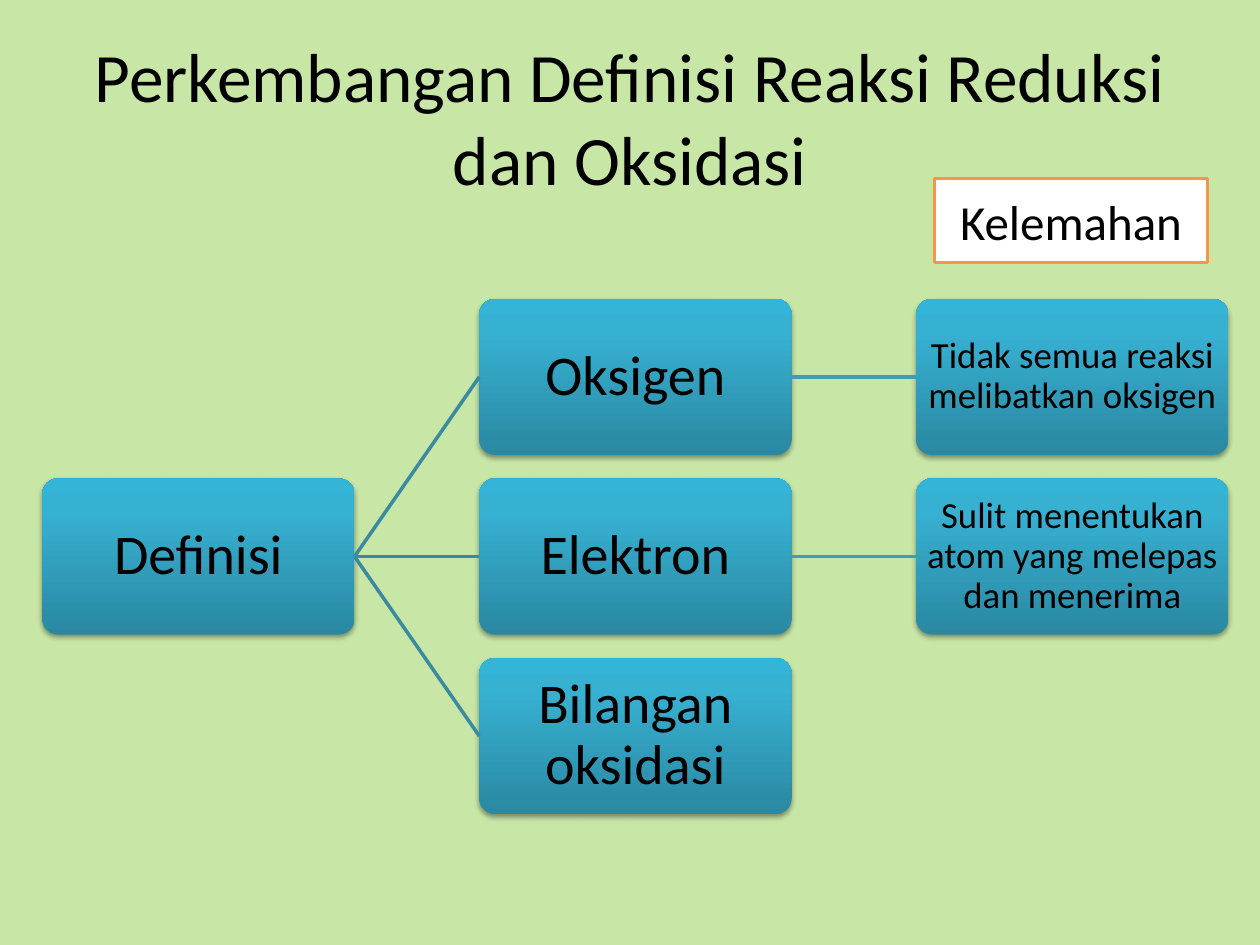
"""Build the slide on how the definition of redox reactions developed."""
import copy

import lxml.etree
import pptx
import pptx.dml.color
import pptx.enum.shapes
import pptx.enum.text
import pptx.oxml
import pptx.oxml.ns
import pptx.util

Pt = pptx.util.Pt
SHAPES = pptx.enum.shapes.MSO_SHAPE

COLOURS = {
    "background": "C8E7A7",
    "text": "000000",
    "box_bottom": "2A88A2",
    "box_middle": "37B1D2",
    "box_top": "34B4D6",
    "branch": "3C8A9F",
    "weakness_link": "449CB4",
    "label_fill": "FFFFFF",
    "label_line": "F79646",
}
BOX_WIDTH, BOX_HEIGHT = 178.4, 89.2
LEFT, TOP = 24.2, 170.8
COLUMN_PITCH, ROW_PITCH = 249.7, 102.6
LEFT_SITE, RIGHT_SITE = 1, 3
SHADOW = (
    '<a:outerShdw %s blurRad="39370" dist="20320" dir="5400000" rotWithShape="0">'
    '<a:srgbClr val="000000"><a:alpha val="38000"/></a:srgbClr></a:outerShdw>'
    % pptx.oxml.ns.nsdecls("a")
)


def colour(name):
    return pptx.dml.color.RGBColor.from_string(COLOURS[name])


def apply_format(target, values):
    for attribute, value in values.items():
        setattr(target, attribute, value)


def write_text(frame, wording, size, inset=None, line_spacing=None):
    frame.text = wording
    apply_format(frame, {
        "word_wrap": True,
        "auto_size": pptx.enum.text.MSO_AUTO_SIZE.NONE,
        "vertical_anchor": pptx.enum.text.MSO_ANCHOR.MIDDLE,
    })
    if inset is not None:
        sides = ("left", "top", "right", "bottom")
        apply_format(frame, {f"margin_{side}": Pt(inset) for side in sides})
    paragraph = frame.paragraphs[0]
    apply_format(paragraph, {
        "alignment": pptx.enum.text.PP_ALIGN.CENTER,
        "line_spacing": line_spacing,
    })
    font = paragraph.runs[0].font
    apply_format(font, {"name": "Calibri", "size": Pt(size)})
    font.color.rgb = colour("text")


def fill_gradient(shape):
    shape.fill.gradient()
    shape.fill.gradient_angle = 90
    stop_list = shape._element.spPr.find(".//" + pptx.oxml.ns.qn("a:gsLst"))
    stop_list.append(copy.deepcopy(stop_list[-1]))
    stops = [(0, "box_bottom"), (0.8, "box_middle"), (1, "box_top")]
    for stop, (position, name) in zip(shape.fill.gradient_stops, stops):
        stop.position = position
        stop.color.rgb = colour(name)


def add_title(slide, wording):
    title = slide.shapes.title
    apply_format(title, {
        "left": Pt(36), "top": Pt(21.6), "width": Pt(648), "height": Pt(90),
    })
    write_text(title.text_frame, wording, 39.6)


def add_box(slide, column, row, wording, size=32, inset=1.6):
    box = slide.shapes.add_shape(
        SHAPES.ROUNDED_RECTANGLE,
        Pt(LEFT + column * COLUMN_PITCH), Pt(TOP + row * ROW_PITCH),
        Pt(BOX_WIDTH), Pt(BOX_HEIGHT),
    )
    box.adjustments[0] = 0.1
    fill_gradient(box)
    box.line.fill.background()
    box.shadow.inherit = False
    effects = box._element.spPr.find(pptx.oxml.ns.qn("a:effectLst"))
    effects.append(pptx.oxml.parse_xml(SHADOW))
    write_text(box.text_frame, wording, size, inset, 0.9)
    return box


def add_link(slide, source, target, line_colour):
    link = slide.shapes.add_connector(
        pptx.enum.shapes.MSO_CONNECTOR.STRAIGHT, Pt(0), Pt(0), Pt(0), Pt(0))
    link.begin_connect(source, RIGHT_SITE)
    link.end_connect(target, LEFT_SITE)
    link.line.width = Pt(2)
    link.line.color.rgb = colour(line_colour)
    lxml.etree.SubElement(link._element.spPr, pptx.oxml.ns.qn("a:effectLst"))


def add_label(slide, wording):
    label = slide.shapes.add_shape(
        SHAPES.RECTANGLE, Pt(534), Pt(102), Pt(156), Pt(48))
    label.shadow.inherit = False
    label.fill.solid()
    label.fill.fore_color.rgb = colour("label_fill")
    label.line.color.rgb = colour("label_line")
    label.line.width = Pt(2)
    write_text(label.text_frame, wording, 28)


def main():
    deck = pptx.Presentation()
    apply_format(deck, {"slide_width": Pt(720), "slide_height": Pt(540)})
    slide = deck.slides.add_slide(deck.slide_layouts.get_by_name("Title Only"))
    slide.background.fill.solid()
    slide.background.fill.fore_color.rgb = colour("background")

    add_title(slide, "Perkembangan Definisi Reaksi Reduksi dan Oksidasi")
    definition = add_box(slide, 0, 1, "Definisi")
    concepts = [
        ("Oksigen", "Tidak semua reaksi melibatkan oksigen"),
        ("Elektron", "Sulit menentukan atom yang melepas dan menerima"),
        ("Bilangan oksidasi", None),
    ]
    for row, (concept, weakness) in enumerate(concepts):
        concept_box = add_box(slide, 1, row, concept)
        add_link(slide, definition, concept_box, "branch")
        if weakness:
            weakness_box = add_box(slide, 2, row, weakness, size=21, inset=1)
            add_link(slide, concept_box, weakness_box, "weakness_link")
    add_label(slide, "Kelemahan")
    deck.save("out.pptx")


if __name__ == "__main__":
    main()
